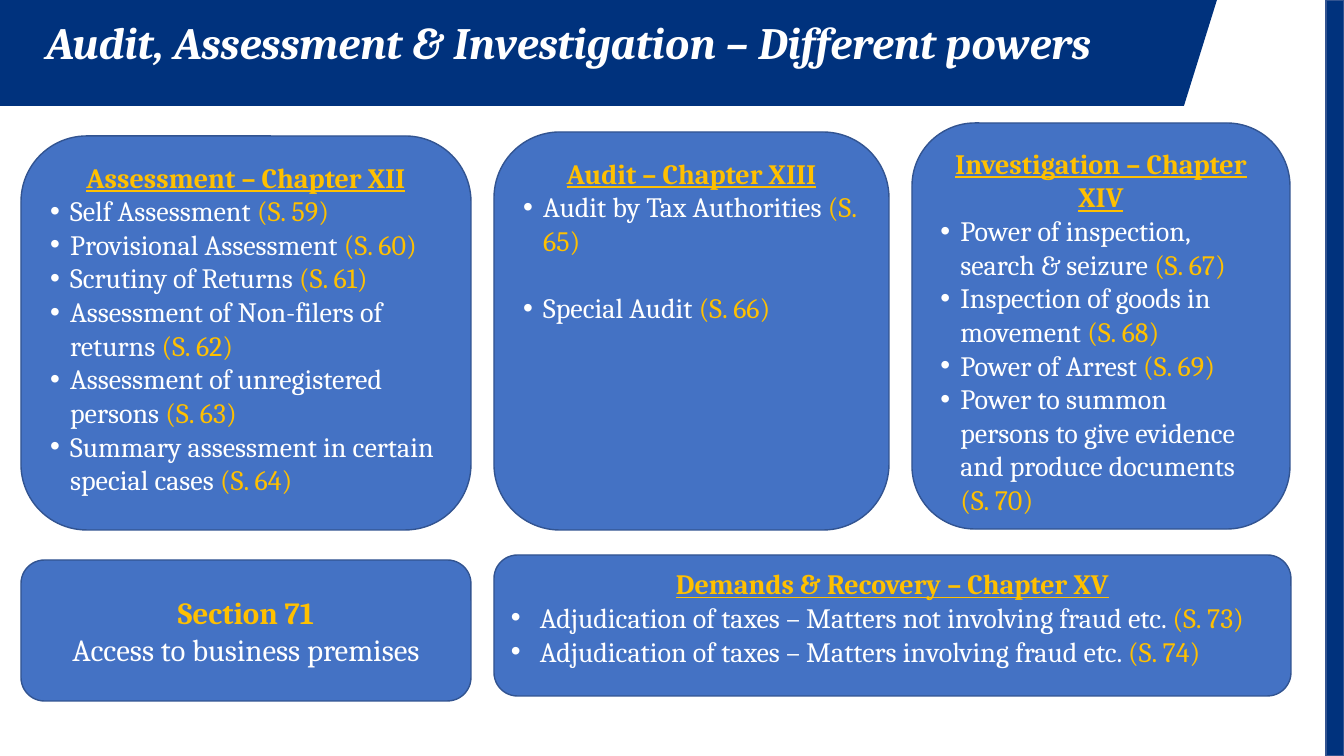
from lxml import etree
from pptx import Presentation
from pptx import util as u
from pptx.dml.color import RGBColor
from pptx.enum import shapes, text
from pptx.oxml.ns import qn

NAVY = RGBColor(0x00, 0x32, 0x7D)
BLUE = RGBColor(0x44, 0x72, 0xC4)
OUTLINE = RGBColor(0x32, 0x54, 0x91)
GOLD = RGBColor(0xFF, 0xC0, 0x00)
WHITE = RGBColor(0xFF, 0xFF, 0xFF)
FONT = "Cambria"
SCALE = u.Inches(1) / 100.8  # EMU per px

SLIDE_SIZE = (1344, 756)
TITLE = "Audit, Assessment & Investigation – Different powers"
TITLE_BOX = (36, 16, 1089, 65)
BANNER = [(0, 0), (0, 106), (1184, 106), (1217, 0)]
SIDE_BAR = (1326, 0, 18, 756)

# Each item is (wording, section, points of space before)
CHAPTERS = [
    {"heading": "Assessment – Chapter XII", "box": (21, 136, 450, 394), "indent": 20,
     "items": [("Self Assessment", 59, 0),
               ("Provisional Assessment", 60, 0),
               ("Scrutiny of Returns", 61, 0),
               ("Assessment of Non-filers of returns", 62, 0),
               ("Assessment of unregistered persons", 63, 0),
               ("Summary assessment in certain special cases", 64, 0)]},
    {"heading": "Investigation – Chapter XIV", "box": (912, 123, 378, 406), "indent": 20,
     "items": [("Power of inspection, search & seizure", 67, 0),
               ("Inspection of goods in movement", 68, 0),
               ("Power of Arrest", 69, 0),
               ("Power to summon persons to give evidence and produce documents", 70, 0)]},
    {"heading": "Audit – Chapter XIII", "box": (494, 132, 395, 398), "indent": 20,
     "items": [("Audit by Tax Authorities", 65, 0),
               ("Special Audit", 66, 24)]},
    {"heading": "Demands & Recovery – Chapter XV", "box": (494, 555, 797, 141), "indent": 29,
     "items": [("Adjudication of taxes – Matters not involving fraud etc.", 73, 0),
               ("Adjudication of taxes – Matters involving fraud etc.", 74, 0)]},
]
ACCESS_BOX = (21, 560, 450, 141)
ACCESS_HEADING = "Section 71"
ACCESS_TEXT = "Access to business premises"


def px(length):
    return u.Emu(round(length * SCALE))


def write(paragraph, wording, size=20, color=WHITE, bold=False, italic=False,
          underline=False, align=None):
    if align is not None:
        paragraph.alignment = align
    run = paragraph.add_run()
    run.text = wording
    font = run.font
    font.name, font.size, font.color.rgb = FONT, u.Pt(size), color
    font.bold, font.italic, font.underline = bold, italic, underline


def add_bullet(paragraph, indent):
    properties = paragraph._p.get_or_add_pPr()
    properties.set("marL", str(px(indent)))
    properties.set("indent", str(-px(indent)))
    etree.SubElement(properties, qn("a:buFont")).set("typeface", "Arial")
    etree.SubElement(properties, qn("a:buChar")).set("char", "•")


def paint(shape, fill, line=None):
    shape.shadow.inherit = False
    shape.fill.solid()
    shape.fill.fore_color.rgb = fill
    if line is None:
        shape.line.fill.background()
    else:
        shape.line.color.rgb = line
        shape.line.width = u.Pt(1)


def add_box(slide, box, kind=shapes.MSO_SHAPE.ROUNDED_RECTANGLE, fill=BLUE):
    shape = slide.shapes.add_shape(kind, *map(px, box))
    paint(shape, fill, OUTLINE)
    return shape


def add_title(slide):
    title = slide.shapes.title
    title.left, title.top, title.width, title.height = map(px, TITLE_BOX)
    frame = title.text_frame
    frame.word_wrap = True
    frame.auto_size = text.MSO_AUTO_SIZE.NONE
    frame.vertical_anchor = text.MSO_ANCHOR.TOP
    paragraph = frame.paragraphs[0]
    paragraph.line_spacing = 0.9
    write(paragraph, TITLE, size=32, bold=True, italic=True, align=text.PP_ALIGN.LEFT)
    # The title has to lie in front of the banner
    title.element.getparent().append(title.element)


def add_chapter(slide, chapter):
    frame = add_box(slide, chapter["box"]).text_frame
    frame.word_wrap = True
    frame.vertical_anchor = text.MSO_ANCHOR.TOP
    write(frame.paragraphs[0], chapter["heading"], color=GOLD, bold=True,
          underline=True, align=text.PP_ALIGN.CENTER)
    for wording, section, gap in chapter["items"]:
        paragraph = frame.add_paragraph()
        paragraph.alignment = text.PP_ALIGN.LEFT
        paragraph.space_before = u.Pt(gap)
        add_bullet(paragraph, chapter["indent"])
        write(paragraph, wording + " ")
        write(paragraph, f"(S. {section})", color=GOLD)


def add_access(slide):
    frame = add_box(slide, ACCESS_BOX).text_frame
    frame.word_wrap = True
    frame.vertical_anchor = text.MSO_ANCHOR.MIDDLE
    write(frame.paragraphs[0], ACCESS_HEADING, size=22, color=GOLD, bold=True,
          align=text.PP_ALIGN.CENTER)
    write(frame.add_paragraph(), ACCESS_TEXT, size=22, align=text.PP_ALIGN.CENTER)


def main():
    presentation = Presentation()
    presentation.slide_width, presentation.slide_height = map(px, SLIDE_SIZE)
    slide = presentation.slides.add_slide(presentation.slide_layouts.get_by_name("Title Only"))

    builder = slide.shapes.build_freeform(*BANNER[0], scale=SCALE)
    builder.add_line_segments(BANNER[1:], close=True)
    paint(builder.convert_to_shape(), NAVY)
    add_box(slide, SIDE_BAR, kind=shapes.MSO_SHAPE.RECTANGLE, fill=NAVY)
    add_title(slide)
    for chapter in CHAPTERS:
        add_chapter(slide, chapter)
    add_access(slide)
    presentation.save("out.pptx")


if __name__ == "__main__":
    main()
